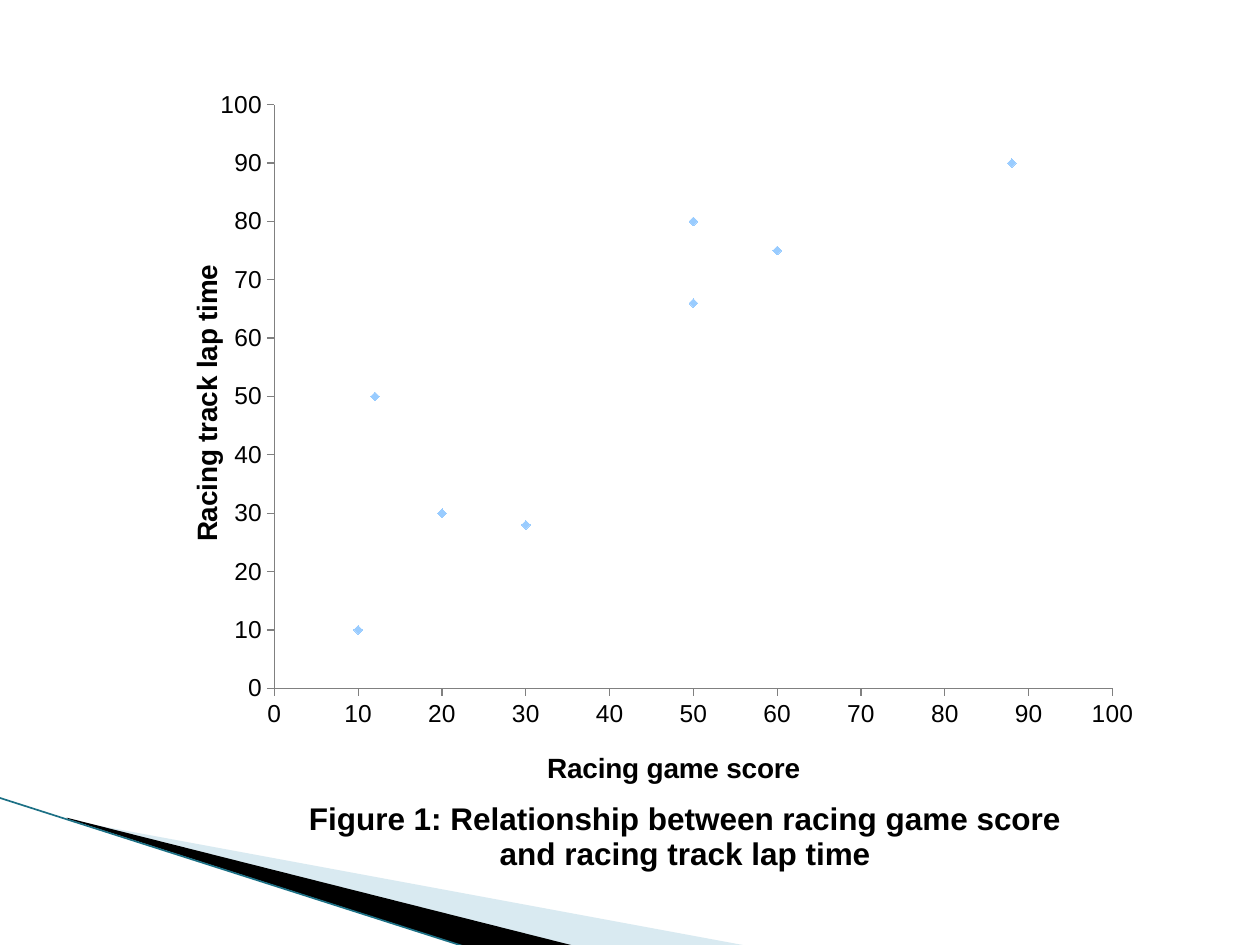
from lxml.etree import SubElement
from pptx import Presentation
from pptx.chart.data import XyChartData
from pptx.dml.color import RGBColor
from pptx.enum.chart import XL_CHART_TYPE, XL_MARKER_STYLE, XL_TICK_MARK
from pptx.enum.shapes import MSO_CONNECTOR
from pptx.oxml import parse_xml
from pptx.oxml.ns import nsdecls, qn
from pptx.util import Inches, Pt

BLACK = RGBColor(0x00, 0x00, 0x00)
PALE = RGBColor(0xA0, 0xCB, 0xDC)
TEAL = RGBColor(0x1C, 0x70, 0x85)
GRAY = RGBColor(0x80, 0x80, 0x80)
SKY = RGBColor(0x99, 0xCC, 0xFF)
POINTS = [(20, 30), (50, 66), (30, 28), (60, 75),
          (88, 90), (10, 10), (12, 50), (50, 80)]


def style(font, size, bold=False, name="Arial", color=BLACK):
    font.size, font.bold, font.name = Pt(size), bold, name
    font.color.rgb = color


def write(frame, text, **form):
    frame.text = text
    style(frame.paragraphs[0].runs[0].font, **form)


def layout(parent, x, y, w=None, h=None):
    """Set a manual chart layout, in shares of the chart's size."""
    parts = {"xMode": "edge", "yMode": "edge", "x": x, "y": y}
    if w:
        parts = {"layoutTarget": "inner", **parts, "w": w, "h": h}
    tags = "".join(f'<c:{tag} val="{val}"/>' for tag, val in parts.items())
    for old in parent.findall(qn("c:layout")):
        parent.remove(old)
    node = parse_xml(f'<c:layout {nsdecls("c")}><c:manualLayout>{tags}'
                     "</c:manualLayout></c:layout>")
    text = parent.find(qn("c:tx"))
    parent.insert(0 if text is None else parent.index(text) + 1, node)


def wedge(slide, left, top, points, color, alpha=None):
    """Draw a filled outline; points are offsets from left and top."""
    spots = [(Inches(left + x), Inches(top + y)) for x, y in points]
    pen = slide.shapes.build_freeform(*spots[0])
    pen.add_line_segments(spots[1:], close=True)
    shape = pen.convert_to_shape()
    shape.shadow.inherit = False
    shape.fill.solid()
    shape.fill.fore_color.rgb = color
    shape.line.fill.background()
    if alpha:
        tint = shape.fill._xPr.find(".//" + qn("a:srgbClr"))
        SubElement(tint, qn("a:alpha"), val=str(alpha * 1000))


def corner(slide, left, top, width, height):
    # Pale and black wedges
    wedge(slide, left + 0.56, top + 0.17,
          [(0, 0.01), (5.4, 1.01), (4.01, 1.01), (0, 0)], PALE, alpha=40)
    wedge(slide, left + 0.54, top + 0.16,
          [(0, 0), (4.04, 1.02), (3.19, 1.03), (0.01, 0.01)], BLACK)
    # Edge line
    edge = slide.shapes.add_connector(
        MSO_CONNECTOR.STRAIGHT, Inches(left), Inches(top),
        Inches(left + width), Inches(top + height))
    edge.line.color.rgb = TEAL
    edge.line.width = Pt(0.95)
    SubElement(edge._element.spPr, qn("a:effectLst"))


def scale(axis, title, x, y):
    """Format one axis and place its title."""
    axis.minimum_scale, axis.maximum_scale, axis.major_unit = 0, 100, 10
    axis.has_major_gridlines = False
    axis.major_tick_mark = XL_TICK_MARK.OUTSIDE
    axis.minor_tick_mark = XL_TICK_MARK.NONE
    axis.format.line.color.rgb = GRAY
    axis.format.line.width = Pt(0.75)
    style(axis.tick_labels.font, 14)
    write(axis.axis_title.text_frame, title, size=16, bold=True)
    layout(axis.axis_title._element, x, y)


def scatter(slide, left, top, width, height):
    data = XyChartData()
    group = data.add_series("Series 1")
    for x, y in POINTS:
        group.add_data_point(x, y)
    chart = slide.shapes.add_chart(
        XL_CHART_TYPE.XY_SCATTER, Inches(left), Inches(top),
        Inches(width), Inches(height), data).chart
    style(chart.font, 18, name="Courier New")
    chart.has_legend = False

    # Titles and axes
    write(chart.chart_title.text_frame,
          "Figure 1: Relationship between racing game score "
          "and racing track lap time", size=18, bold=True)
    layout(chart.chart_title._element, 0.13, 0.89)
    scale(chart.category_axis, "Racing game score", 0.37, 0.83)
    scale(chart.value_axis, "Racing track lap time", 0.01, 0.22)
    layout(chart._chartSpace.chart.plotArea, 0.101, 0.024, 0.842, 0.735)

    # Markers only
    plot = chart.plots[0]
    plot.vary_by_categories = False
    dots = plot.series[0]
    dots.smooth = False
    dots.format.line.fill.background()
    dots.marker.style = XL_MARKER_STYLE.DIAMOND
    dots.marker.size = 5
    dots.marker.format.fill.solid()
    dots.marker.format.fill.fore_color.rgb = SKY
    dots.marker.format.line.color.rgb = SKY


def main():
    deck = Presentation()
    deck.slide_width, deck.slide_height = Inches(10), Inches(7.5)
    slide = deck.slides.add_slide(deck.slide_layouts[6])
    corner(slide, -0.01, 6.33, 3.72, 1.19)
    scatter(slide, 1.38, 0.68, 7.9, 6.32)
    deck.save("out.pptx")


if __name__ == "__main__":
    main()
